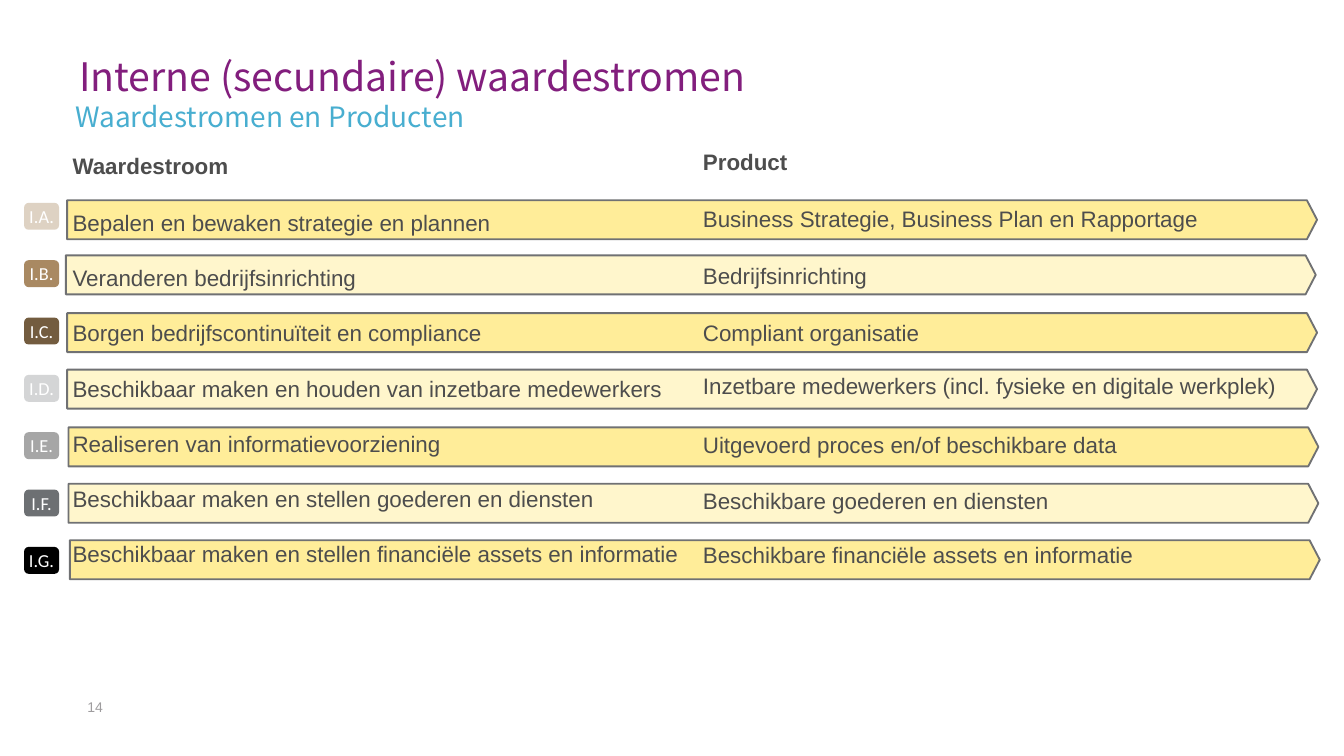
from typing import NamedTuple

import pptx
import pptx.dml.color
import pptx.enum.shapes
import pptx.enum.text
import pptx.util
from pptx.util import Inches

SHAPES = pptx.enum.shapes.MSO_SHAPE
GREY = "4D4D4D"
STRONG_YELLOW, PALE_YELLOW = "FFED99", "FFF6CC"
BADGE_TOP, BADGE_PITCH = 1.51, (4.07 - 1.51) / 6


class Stream(NamedTuple):
    code: str
    badge_color: str
    arrow_left: float
    arrow_top: float


class Line(NamedTuple):
    text: str
    before: float = 4.5
    after: float = 4.5


class Style(NamedTuple):
    font: str
    size: float
    color: str
    bold: bool = False


STREAMS = [
    Stream("I.A.", "DED2C3", 0.50, 1.49),
    Stream("I.B.", "A98962", 0.49, 1.90),
    Stream("I.C.", "735C3F", 0.50, 2.33),
    Stream("I.D.", "D4D5D6", 0.50, 2.75),
    Stream("I.E.", "A6A6A6", 0.51, 3.18),
    Stream("I.F.", "6D7073", 0.51, 3.60),
    Stream("I.G.", "000000", 0.52, 4.02),
]

PRODUCTS = [
    Line("Product", before=0),
    Line("Business Strategie, Business Plan en Rapportage"),
    Line("Bedrijfsinrichting"),
    Line("Compliant organisatie", after=2),
    Line("Inzetbare medewerkers (incl. fysieke en digitale werkplek)", after=2),
    Line("Uitgevoerd proces en/of beschikbare data", before=8),
    Line("Beschikbare goederen en diensten", before=4),
    Line("Beschikbare financiële assets en informatie", before=3),
]

STREAM_NAMES = [Line("Waardestroom", before=0)] + [
    Line(name, after=3.5)
    for name in (
        "Bepalen en bewaken strategie en plannen",
        "Veranderen bedrijfsinrichting",
        "Borgen bedrijfscontinuïteit en compliance",
        "Beschikbaar maken en houden van inzetbare medewerkers",
        "Realiseren van informatievoorziening",
        "Beschikbaar maken en stellen goederen en diensten",
        "Beschikbaar maken en stellen financiële assets en informatie",
    )
]


def rgb(color: str) -> pptx.dml.color.RGBColor:
    return pptx.dml.color.RGBColor.from_string(color)


def format_font(paragraph, style: Style) -> None:
    font = paragraph.runs[0].font
    font.name, font.bold = style.font, style.bold
    font.size = pptx.util.Pt(style.size)
    font.color.rgb = rgb(style.color)


def set_margins(frame, vertical: float = 0) -> None:
    frame.margin_left = frame.margin_right = 0
    frame.margin_top = frame.margin_bottom = Inches(vertical)


def add_text(slide, left: float, top: float, width: float, height: float, text: str, style: Style):
    """Add a wrapped, margin-free text box with one paragraph per line of text."""
    box = slide.shapes.add_textbox(Inches(left), Inches(top), Inches(width), Inches(height))
    frame = box.text_frame
    frame.word_wrap = True
    set_margins(frame)
    frame.text = text
    for paragraph in frame.paragraphs:
        format_font(paragraph, style)
    return frame.paragraphs


def add_column(slide, left: float, top: float, width: float, lines: list[Line]) -> None:
    """Add a bold heading followed by one line per value stream."""
    text = "\n".join(line.text for line in lines)
    paragraphs = add_text(slide, left, top, width, 3.73, text, Style("Arial", 12, GREY))
    paragraphs[0].runs[0].font.bold = True
    for paragraph, line in zip(paragraphs, lines):
        paragraph.line_spacing = 1.5
        paragraph.space_before = pptx.util.Pt(line.before)
        paragraph.space_after = pptx.util.Pt(line.after)


def add_arrow(slide, stream: Stream, color: str) -> None:
    arrow = slide.shapes.add_shape(
        SHAPES.PENTAGON, Inches(stream.arrow_left), Inches(stream.arrow_top), Inches(9.3), Inches(0.29)
    )
    arrow.adjustments[0] = 0.26
    arrow.shadow.inherit = False
    arrow.fill.solid()
    arrow.fill.fore_color.rgb = rgb(color)
    arrow.line.color.rgb = rgb("707173")
    arrow.line.width = pptx.util.Pt(1)


def add_badge(slide, stream: Stream, top: float) -> None:
    badge = slide.shapes.add_shape(
        SHAPES.ROUNDED_RECTANGLE, Inches(0.18), Inches(top), Inches(0.26), Inches(0.2)
    )
    badge.shadow.inherit = False
    badge.fill.solid()
    badge.fill.fore_color.rgb = rgb(stream.badge_color)
    badge.line.fill.background()
    frame = badge.text_frame
    set_margins(frame, vertical=0.05)
    frame.vertical_anchor = pptx.enum.text.MSO_ANCHOR.MIDDLE
    frame.text = stream.code
    frame.paragraphs[0].alignment = pptx.enum.text.PP_ALIGN.CENTER
    format_font(frame.paragraphs[0], Style("Calibri", 9.8, "FFFFFF"))


def main() -> None:
    deck = pptx.Presentation()
    deck.slide_width = Inches(10)
    deck.slide_height = Inches(10 * 9 / 16)
    slide = deck.slides.add_slide(deck.slide_layouts[6])

    add_text(slide, 0.65, 5.2, 0.39, 0.24, "14", Style("Arial", 7.5, "9E9C9E"))
    for index, stream in enumerate(STREAMS):
        add_arrow(slide, stream, PALE_YELLOW if index % 2 else STRONG_YELLOW)
    add_column(slide, 5.23, 1, 4.72, PRODUCTS)
    add_column(slide, 0.54, 1.03, 7.37, STREAM_NAMES)
    for index, stream in enumerate(STREAMS):
        add_badge(slide, stream, BADGE_TOP + index * BADGE_PITCH)

    title = add_text(slide, 0.59, 0.35, 7.28, 0.39, "Interne (secundaire) waardestromen",
                     Style("Noto Sans CJK TC", 21, "821E7D"))
    title[0].line_spacing = pptx.util.Pt(28)
    subtitle = add_text(slide, 0.56, 0.69, 8.32, 0.24, "Waardestromen en Producten",
                        Style("Noto Sans CJK TC", 15, "48AED0"))
    subtitle[0].line_spacing = 1.2

    deck.save("out.pptx")


if __name__ == "__main__":
    main()
